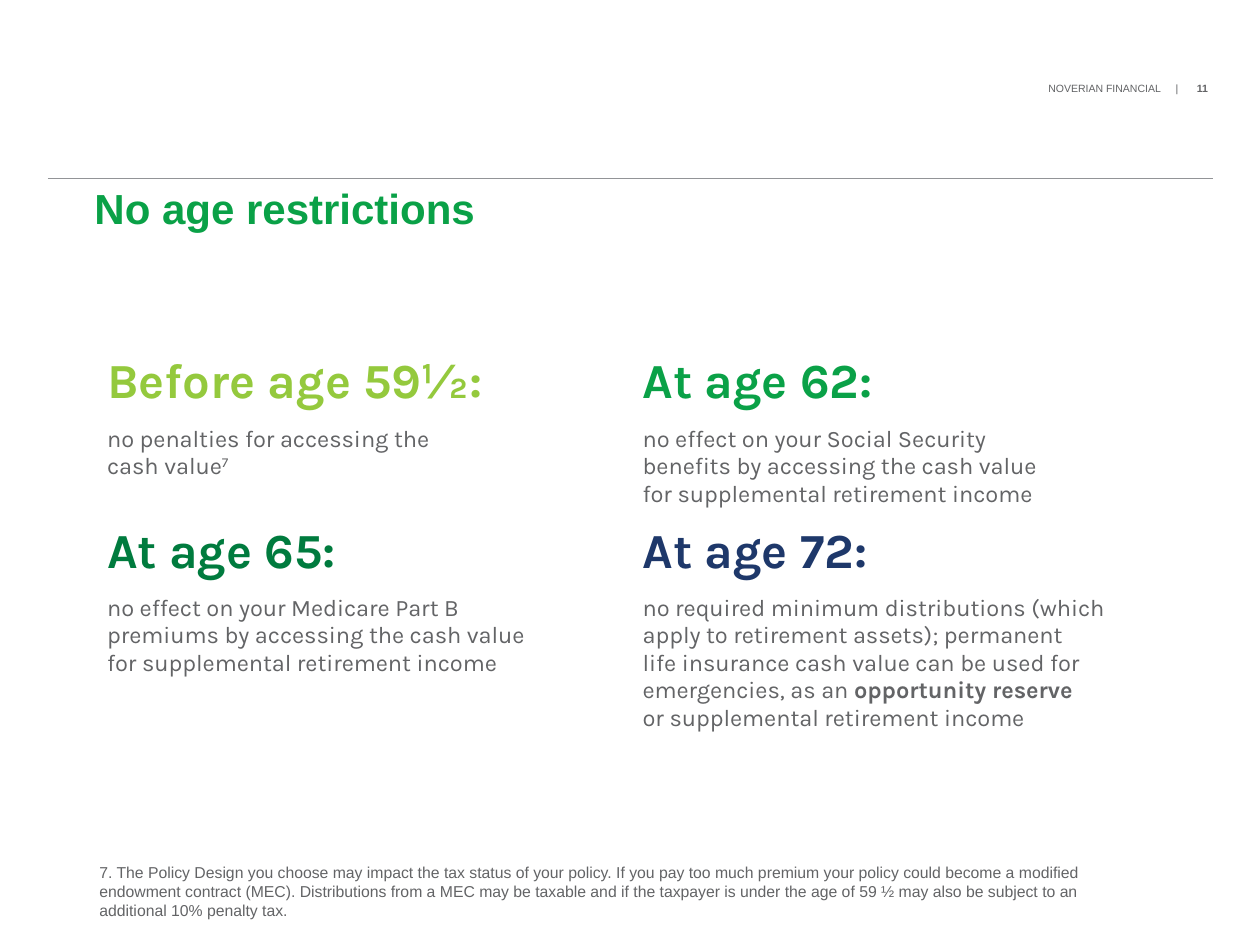
from dataclasses import dataclass

from lxml.etree import SubElement
from pptx import Presentation
from pptx.dml.color import RGBColor
from pptx.enum.shapes import MSO_CONNECTOR
from pptx.oxml.ns import qn
from pptx.util import Inches, Pt

LIME = RGBColor(0x94, 0xC9, 0x3D)
GREEN = RGBColor(0x0A, 0xA1, 0x47)
FOREST = RGBColor(0x00, 0x7B, 0x3E)
NAVY = RGBColor(0x1E, 0x38, 0x6A)
GRAY = RGBColor(0x63, 0x64, 0x66)
RULE = RGBColor(0x92, 0x94, 0x97)

NOTE = (
    "7. The Policy Design you choose may impact the tax status of your policy. "
    "If you pay too much premium your policy could become a modified endowment "
    "contract (MEC). Distributions from a MEC may be taxable and if the taxpayer "
    "is under the age of 59 ½ may also be subject to an additional 10% penalty tax."
)


@dataclass
class Age:
    head: str
    color: RGBColor
    lines: list[str]
    bold: str = ""
    mark: str = ""


AGES = [
    Age("Before age 59½:", LIME,
        ["no penalties for accessing the", "cash value"], mark="7"),
    Age("At age 62:", GREEN,
        ["no effect on your Social Security",
         "benefits by accessing the cash value",
         "for supplemental retirement income"]),
    Age("At age 65:", FOREST,
        ["no effect on your Medicare Part B",
         "premiums by accessing the cash value",
         "for supplemental retirement income"]),
    Age("At age 72:", NAVY,
        ["no required minimum distributions (which",
         "apply to retirement assets); permanent",
         "life insurance cash value can be used for",
         "emergencies, as an opportunity reserve",
         "or supplemental retirement income"], bold="opportunity reserve"),
]


def style(run, size: float, color: RGBColor, bold: bool = False,
          face: str = "Arial") -> None:
    font = run.font
    font.name, font.size, font.bold = face, Pt(size), bold
    font.color.rgb = color


def add_box(slide, left: float, top: float, width: float, height: float,
            text: str, pad: bool = True):
    """Add a wrapping text box and return its first paragraph."""
    frame = slide.shapes.add_textbox(
        Inches(left), Inches(top), Inches(width), Inches(height)).text_frame
    frame.word_wrap = True
    if not pad:
        frame.margin_left = frame.margin_right = 0
        frame.margin_top = frame.margin_bottom = 0
    frame.text = text
    return frame.paragraphs[0]


def add_footer(slide) -> None:
    para = add_box(slide, 8.32, 0.65, 1.4, 0.12, "NOVERIAN FINANCIAL\t|\t", False)
    tabs = SubElement(para._p.get_or_add_pPr(), qn("a:tabLst"))
    for stop in (1.01, 1.18):
        SubElement(tabs, qn("a:tab"), pos=str(Inches(stop)), algn="l")
    page = para.add_run()
    page.text = "11"
    for run in para.runs:
        style(run, 6, GRAY, run is page)
    style(para.runs[-1], 6, GRAY, True)


def add_rule(slide) -> None:
    rule = slide.shapes.add_connector(
        MSO_CONNECTOR.STRAIGHT, Inches(0.38), Inches(1.42), Inches(9.63), Inches(1.42))
    rule.line.color.rgb = RULE
    rule.line.width = Pt(0.5)
    SubElement(rule._element.spPr, qn("a:effectLst"))


def fill_body(frame, age: Age) -> None:
    frame.text = "\n".join(age.lines)
    for para in frame.paragraphs:
        if age.bold and age.bold in para.text:
            para.text = para.text.removesuffix(age.bold)
            para.add_run().text = age.bold
        for run in para.runs:
            style(run, 13.5, GRAY, run.text == age.bold, "Karla")
    if age.mark:
        run = frame.paragraphs[-1].add_run()
        run.text = age.mark
        style(run, 13.5, GRAY, face="Karla")
        run._r.get_or_add_rPr().set("baseline", "30000")


def add_ages(slide) -> None:
    table = slide.shapes.add_table(
        4, 2, Inches(0.75), Inches(2.76), Inches(8.5), Inches(1.64)).table
    table.first_row = table.horz_banding = False
    for cell in table.iter_cells():
        cell.fill.background()
    for i, age in enumerate(AGES):
        row, col = i // 2 * 2, i % 2
        head = table.cell(row, col).text_frame
        head.text = age.head
        style(head.paragraphs[0].runs[0], 28, age.color, True, "Karla")
        fill_body(table.cell(row + 1, col).text_frame, age)


def main() -> None:
    deck = Presentation()
    deck.slide_width, deck.slide_height = Inches(10), Inches(7.5)
    slide = deck.slides.add_slide(deck.slide_layouts[6])
    add_footer(slide)
    add_rule(slide)
    title = add_box(slide, 0.75, 1.58, 8.5, 1.05, "No age restrictions", False)
    title.line_spacing = Pt(19.5)
    style(title.runs[0], 24, GREEN, True)
    add_ages(slide)
    note = add_box(slide, 0.69, 6.8, 8.08, 0.56, NOTE)
    style(note.runs[0], 9, GRAY)
    deck.save("out.pptx")


if __name__ == "__main__":
    main()
